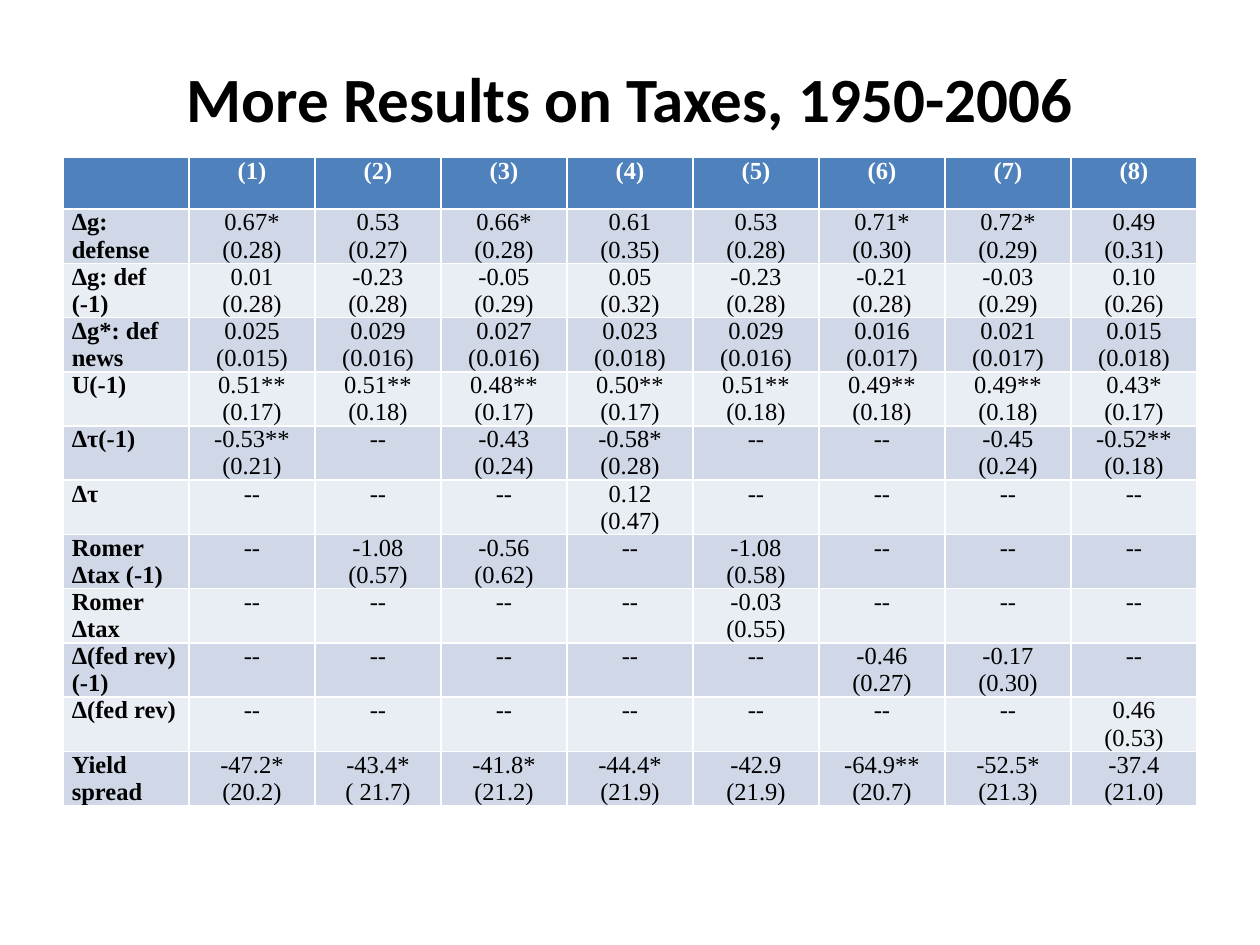
from pptx import Presentation
from pptx.dml.color import RGBColor
from pptx.enum import text
from pptx.util import Inches, Pt

TITLE = "More Results on Taxes, 1950-2006"
HEADER = ["", "(1)", "(2)", "(3)", "(4)", "(5)", "(6)", "(7)", "(8)"]

# Label, then estimates by column; "/" starts the next paragraph in a cell
RESULTS = [
    ("Δg: defense", "0.67*/(0.28) | 0.53/(0.27) | 0.66*/(0.28) | 0.61/(0.35) | "
                    "0.53/(0.28) | 0.71*/(0.30) | 0.72*/(0.29) | 0.49/(0.31)"),
    ("Δg: def/(-1)", "0.01/(0.28) | -0.23/(0.28) | -0.05/(0.29) | 0.05/(0.32) | "
                     "-0.23/(0.28) | -0.21/(0.28) | -0.03/(0.29) | 0.10/(0.26)"),
    ("Δg*: def news", "0.025/(0.015) | 0.029/(0.016) | 0.027/(0.016) | 0.023/(0.018) | "
                      "0.029/(0.016) | 0.016/(0.017) | 0.021/(0.017) | 0.015/(0.018)"),
    ("U(-1)", "0.51**/(0.17) | 0.51**/(0.18) | 0.48**/(0.17) | 0.50**/(0.17) | "
              "0.51**/(0.18) | 0.49**/(0.18) | 0.49**/(0.18) | 0.43*/(0.17)"),
    ("Δτ(-1)", "-0.53**/(0.21) | -- | -0.43/(0.24) | -0.58*/(0.28) | "
               "-- | -- | -0.45/(0.24) | -0.52**/(0.18)"),
    ("Δτ", "-- | -- | -- | 0.12/(0.47) | -- | -- | -- | --"),
    ("Romer/Δtax (-1)", "-- | -1.08/(0.57) | -0.56/(0.62) | -- | -1.08/(0.58) | -- | -- | --"),
    ("Romer/Δtax", "-- | -- | -- | -- | -0.03/(0.55) | -- | -- | --"),
    ("Δ(fed rev)/(-1)", "-- | -- | -- | -- | -- | -0.46/(0.27) | -0.17/(0.30) | --"),
    ("Δ(fed rev)", "-- | -- | -- | -- | -- | -- | -- | 0.46/(0.53)"),
    ("Yield spread", "-47.2*/(20.2) | -43.4*/( 21.7) | -41.8*/(21.2) | -44.4*/(21.9) | "
                     "-42.9/(21.9) | -64.9**/(20.7) | -52.5*/(21.3) | -37.4/(21.0)"),
]

BLACK = RGBColor(0x00, 0x00, 0x00)
WHITE = RGBColor(0xFF, 0xFF, 0xFF)
HEADER_BLUE = RGBColor(0x4F, 0x81, 0xBD)
BANDS = [RGBColor(0xE9, 0xED, 0xF4), RGBColor(0xD0, 0xD8, 0xE8)]

COLUMN_WIDTH = Inches(1)
ROW_HEIGHT = Inches(0.41)
CELL_FORMAT = {
    "margin_left": Inches(0.07), "margin_right": Inches(0.07),
    "margin_top": 0, "margin_bottom": 0,
    "vertical_anchor": text.MSO_ANCHOR.TOP,
}


def set_attributes(target, values):
    for name, value in values.items():
        setattr(target, name, value)


def write(text_frame, content, alignment, color, **font_format):
    text_frame.text = content
    for paragraph in text_frame.paragraphs:
        paragraph.alignment = alignment
        for run in paragraph.runs:
            set_attributes(run.font, font_format)
            run.font.color.rgb = color


presentation = Presentation()
presentation.slide_width, presentation.slide_height = Inches(10), Inches(7.5)
slide = presentation.slides.add_slide(presentation.slide_layouts[5])

# Title
title = slide.shapes.title
set_attributes(title, {"left": Inches(0.5), "top": Inches(0.3),
                       "width": Inches(9), "height": Inches(0.95)})
title.text_frame.vertical_anchor = text.MSO_ANCHOR.MIDDLE
write(title.text_frame, TITLE, text.PP_ALIGN.CENTER, BLACK,
      name="Calibri", size=Pt(36), bold=True)

# Regression table
rows = [HEADER] + [[label] + values.split(" | ") for label, values in RESULTS]
table = slide.shapes.add_table(
    len(rows), len(HEADER), Inches(0.5), Inches(1.25),
    COLUMN_WIDTH * len(HEADER), ROW_HEIGHT * len(rows)).table
for column in table.columns:
    column.width = COLUMN_WIDTH

for row_index, values in enumerate(rows):
    table.rows[row_index].height = ROW_HEIGHT
    is_header = row_index == 0
    for column_index, value in enumerate(values):
        is_label = column_index == 0
        cell = table.cell(row_index, column_index)
        set_attributes(cell, CELL_FORMAT)
        cell.fill.solid()
        cell.fill.fore_color.rgb = HEADER_BLUE if is_header else BANDS[row_index % 2]
        write(cell.text_frame, value.replace("/", "\n"),
              text.PP_ALIGN.LEFT if is_label else text.PP_ALIGN.CENTER,
              WHITE if is_header else BLACK,
              name="Times New Roman", size=Pt(14), bold=is_header or is_label)

presentation.save("out.pptx")
